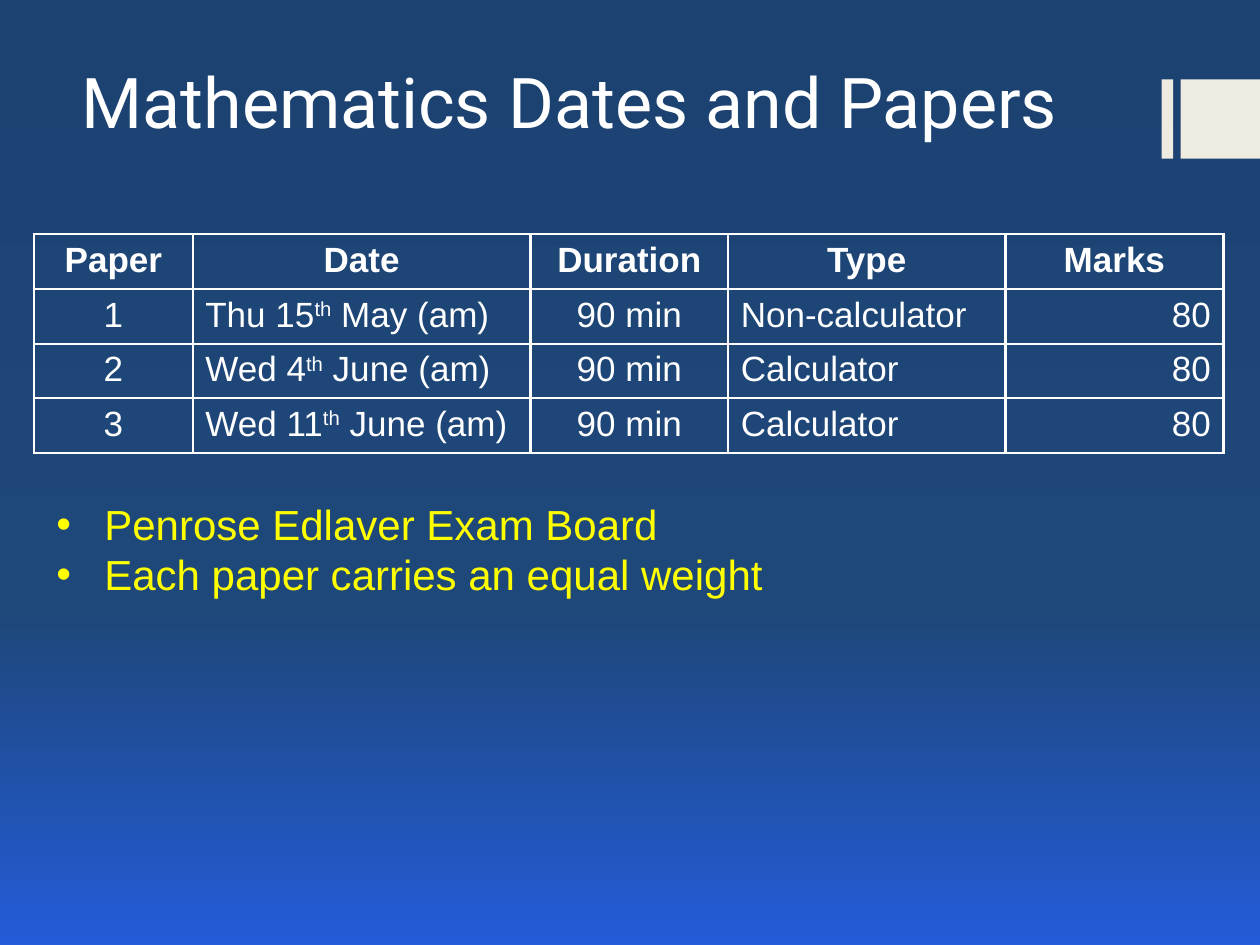
import copy

import lxml.etree
import pptx
import pptx.dml.color
import pptx.enum.shapes
import pptx.enum.text
import pptx.oxml.ns
import pptx.util

qn = pptx.oxml.ns.qn
RGB = pptx.dml.color.RGBColor.from_string
ALIGN = pptx.enum.text.PP_ALIGN
HUES = {
    "top": "1C4271",
    "mid": "1E477A",
    "low": "245CD9",
    "cream": "EEECE1",
    "white": "FFFFFF",
    "yellow": "FFFF00",
}

deck = pptx.Presentation()
deck.slide_width = pptx.util.Inches(10)
deck.slide_height = pptx.util.Inches(7.5)
slide = deck.slides.add_slide(deck.slide_layouts[6])
shapes = slide.shapes


def area(x, y, w, h):
    """Turn percentages of the slide's width and height into lengths."""
    wide, high = deck.slide_width / 100, deck.slide_height / 100
    return [round(n) for n in (x * wide, y * high, w * wide, h * high)]


def write(frame, text, size=20, font="Arial", hue="white", bold=False,
          align=ALIGN.LEFT, bullet=False):
    """Fill a frame, a paragraph per line; ^ marks raise every second part."""
    frame.word_wrap = True
    for i, line in enumerate(text.split("\n")):
        par = frame.add_paragraph() if i else frame.paragraphs[0]
        par.alignment = align
        if bullet:
            props = par._p.get_or_add_pPr()
            dent = pptx.util.Inches(0.38)
            props.set("marL", str(dent))
            props.set("indent", str(-dent))
            lxml.etree.SubElement(props, qn("a:buFont"), typeface="Arial")
            lxml.etree.SubElement(props, qn("a:buChar"), char="•")
        for j, part in enumerate(line.split("^")):
            run = par.add_run()
            run.text = part
            run.font.size = pptx.util.Pt(size)
            run.font.name = font
            run.font.bold = bold
            run.font.color.rgb = RGB(HUES[hue])
            if j % 2:
                run.font._element.set("baseline", "30000")


# Background
fill = slide.background.fill
fill.gradient()
fill.gradient_angle = 270
stops = slide.element.find(".//" + qn("a:gsLst"))
stops.append(copy.deepcopy(stops[0]))
for stop, hue, place in zip(fill.gradient_stops, ("top", "mid", "low"), (0, 0.65, 1)):
    stop.color.rgb = RGB(HUES[hue])
    stop.position = place

# Side marks
for x, w in ((92.2, 0.9), (93.7, 6.3)):
    mark = shapes.add_shape(pptx.enum.shapes.MSO_SHAPE.RECTANGLE, *area(x, 8.4, w, 8.4))
    mark.shadow.inherit = False
    mark.fill.solid()
    mark.fill.fore_color.rgb = RGB(HUES["cream"])
    mark.line.fill.background()

# Title
title = shapes.add_textbox(*area(5.5, 1.2, 94.5, 14.5)).text_frame
title.vertical_anchor = pptx.enum.text.MSO_ANCHOR.BOTTOM
write(title, "Mathematics Dates and Papers", size=40, font="Roboto")

# Exam table
ROWS = [
    ("Paper", "Date", "Duration", "Type", "Marks"),
    ("1", "Thu 15^th^ May (am)", "90 min", "Non-calculator", "80"),
    ("2", "Wed 4^th^ June (am)", "90 min", "Calculator", "80"),
    ("3", "Wed 11^th^ June (am)", "90 min", "Calculator", "80"),
]
WIDTHS = (12.6, 26.8, 15.7, 22, 17.3)
SIDES = (ALIGN.CENTER, ALIGN.LEFT, ALIGN.CENTER, ALIGN.LEFT, ALIGN.RIGHT)
table = shapes.add_table(
    len(ROWS), len(WIDTHS), *area(2.7, 24.8, sum(WIDTHS), 5.5 * len(ROWS))).table
table.first_row = table.horz_banding = False
for col, w in zip(table.columns, WIDTHS):
    col.width = area(0, 0, w, 0)[2]
for r, row in enumerate(ROWS):
    for c, text in enumerate(row):
        cell = table.cell(r, c)
        head = r == 0
        write(cell.text_frame, text, bold=head, align=ALIGN.CENTER if head else SIDES[c])
        props = cell._tc.get_or_add_tcPr()
        for edge in ("a:lnL", "a:lnR", "a:lnT", "a:lnB"):
            line = lxml.etree.SubElement(props, qn(edge), w=str(pptx.util.Pt(1.5)))
            paint = lxml.etree.SubElement(line, qn("a:solidFill"))
            lxml.etree.SubElement(paint, qn("a:srgbClr"), val=HUES["white"])
        cell.fill.background()

# Notes on the papers
notes = shapes.add_textbox(*area(3.5, 52.1, 69.3, 12.1)).text_frame
write(notes, "Penrose Edlaver Exam Board\nEach paper carries an equal weight",
      size=24, hue="yellow", bullet=True)

deck.save("out.pptx")
